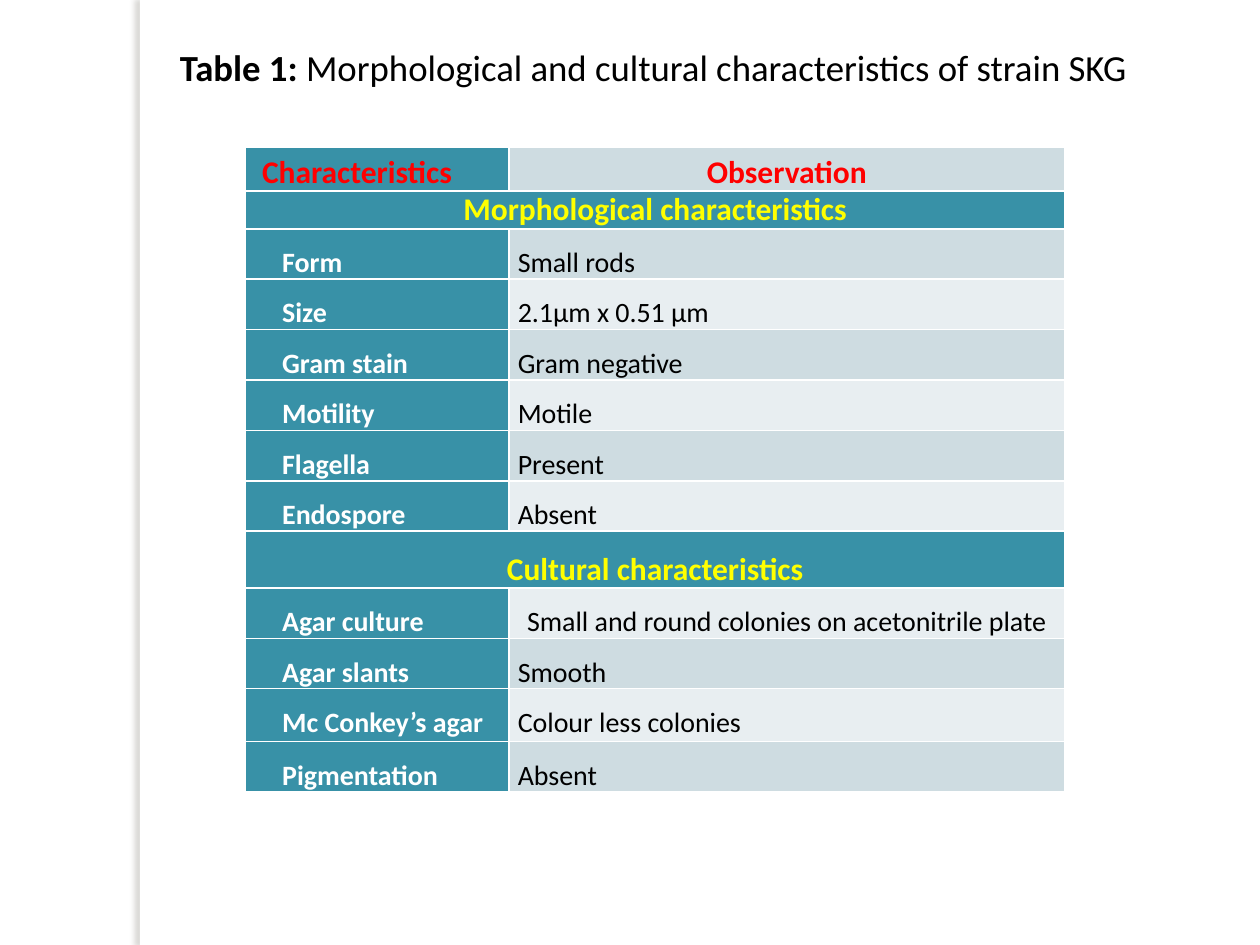
from dataclasses import dataclass
from lxml import etree
from pptx import Presentation, util as u
from pptx.dml.color import RGBColor
from pptx.enum import shapes, text
from pptx.oxml import ns


@dataclass(frozen=True)
class Theme:
    font: str = "Calibri"
    title: float = 21
    head: float = 18
    body: float = 16
    white: str = "FFFFFF"
    black: str = "000000"
    red: str = "FF0000"
    gold: str = "FFFF00"
    teal: str = "3891A7"
    dark: str = "CEDCE1"
    light: str = "E8EEF1"
    shade: str = "736F63"


@dataclass(frozen=True)
class Style:
    size: float
    color: str
    bold: bool = False
    align: text.PP_ALIGN = text.PP_ALIGN.LEFT
    lead: float = 1.5
    dent: float = 0


@dataclass(frozen=True)
class Row:
    name: str
    value: str = ""
    high: float = 0.4
    align: text.PP_ALIGN = text.PP_ALIGN.LEFT


T = Theme()
MID = text.PP_ALIGN.CENTER
KEY = Style(T.head, T.red, True, lead=1.15, dent=0.06)
HEAD = Style(T.head, T.red, True, MID, 1.15)
LABEL = Style(T.body, T.white, True, dent=0.22)

ROWS = [
    Row("Characteristics", "Observation", 0.33),
    Row("Morphological characteristics", high=0.3),
    Row("Form", "Small rods"),
    Row("Size", "2.1µm x 0.51 µm"),
    Row("Gram stain", "Gram negative"),
    Row("Motility", "Motile"),
    Row("Flagella", "Present"),
    Row("Endospore", "Absent"),
    Row("Cultural characteristics", high=0.45),
    Row("Agar culture", "Small and round colonies on acetonitrile plate", align=MID),
    Row("Agar slants", "Smooth"),
    Row("Mc Conkey’s agar", "Colour less colonies", 0.42),
    Row("Pigmentation", "Absent"),
]


def add_run(par, words: str, style: Style) -> None:
    run = par.add_run()
    run.text = words
    font = run.font
    font.name, font.size, font.bold = T.font, u.Pt(style.size), style.bold
    font.color.rgb = RGBColor.from_string(style.color)


def paint(fill, color: str) -> None:
    fill.solid()
    fill.fore_color.rgb = RGBColor.from_string(color)


def add_edges(cell) -> None:
    props = cell._tc.get_or_add_tcPr()
    for spot, side in enumerate(("lnL", "lnR", "lnT", "lnB")):
        line = etree.Element(ns.qn(f"a:{side}"), w=str(u.Pt(1)))
        fill = etree.SubElement(line, ns.qn("a:solidFill"))
        etree.SubElement(fill, ns.qn("a:srgbClr"), val=T.white)
        props.insert(spot, line)


def set_cell(cell, words: str, style: Style, color: str) -> None:
    paint(cell.fill, color)
    add_edges(cell)
    cell.margin_left = cell.margin_right = u.Inches(0.07)
    cell.margin_top = cell.margin_bottom = 0
    par = cell.text_frame.paragraphs[0]
    par.alignment, par.line_spacing = style.align, style.lead
    if style.dent:
        par._p.get_or_add_pPr().set("indent", str(u.Inches(style.dent)))
    add_run(par, words, style)


def add_strip(slide) -> None:
    strip = slide.shapes.add_shape(
        shapes.MSO_SHAPE.RECTANGLE, u.Inches(1.11), 0, u.Inches(0.08), u.Inches(7.5))
    paint(strip.fill, T.white)
    strip.line.fill.background()
    strip.shadow.inherit = False
    glow = etree.SubElement(
        strip._element.spPr.find(ns.qn("a:effectLst")), ns.qn("a:outerShdw"),
        blurRad=str(u.Pt(3)), dist=str(u.Pt(3)), dir="10800000", rotWithShape="0")
    tint = etree.SubElement(glow, ns.qn("a:srgbClr"), val=T.shade)
    etree.SubElement(tint, ns.qn("a:alpha"), val="25000")


def add_title(slide) -> None:
    box = slide.shapes.add_textbox(
        u.Inches(1.33), u.Inches(0.31), u.Inches(8.05), u.Inches(0.45))
    box.text_frame.word_wrap = True
    par = box.text_frame.paragraphs[0]
    add_run(par, "Table 1:", Style(T.title, T.black, True))
    add_run(par, " Morphological and cultural characteristics of strain SKG",
            Style(T.title, T.black))


def add_grid(slide) -> None:
    grid = slide.shapes.add_table(
        len(ROWS), 2, u.Inches(1.95), u.Inches(1.17), u.Inches(6.5),
        u.Inches(sum(row.high for row in ROWS))).table
    for col, wide in zip(grid.columns, (2.09, 4.41)):
        col.width = u.Inches(wide)
    for i, row in enumerate(ROWS):
        grid.rows[i].height = u.Inches(row.high)
        left, right = grid.cell(i, 0), grid.cell(i, 1)
        if not row.value:
            left.merge(right)
            lead = 1.0 if i == 1 else 1.5
            set_cell(left, row.name, Style(T.head, T.gold, True, MID, lead), T.teal)
            add_edges(right)
            continue
        band = T.light if i % 2 else T.dark
        body = Style(T.body, T.black, align=row.align)
        set_cell(left, row.name, LABEL if i else KEY, T.teal)
        set_cell(right, row.value, body if i else HEAD, band)


def main() -> None:
    deck = Presentation()
    deck.slide_width, deck.slide_height = u.Inches(10), u.Inches(7.5)
    slide = deck.slides.add_slide(deck.slide_layouts[6])
    add_strip(slide)
    add_title(slide)
    add_grid(slide)
    deck.save("out.pptx")


if __name__ == "__main__":
    main()
